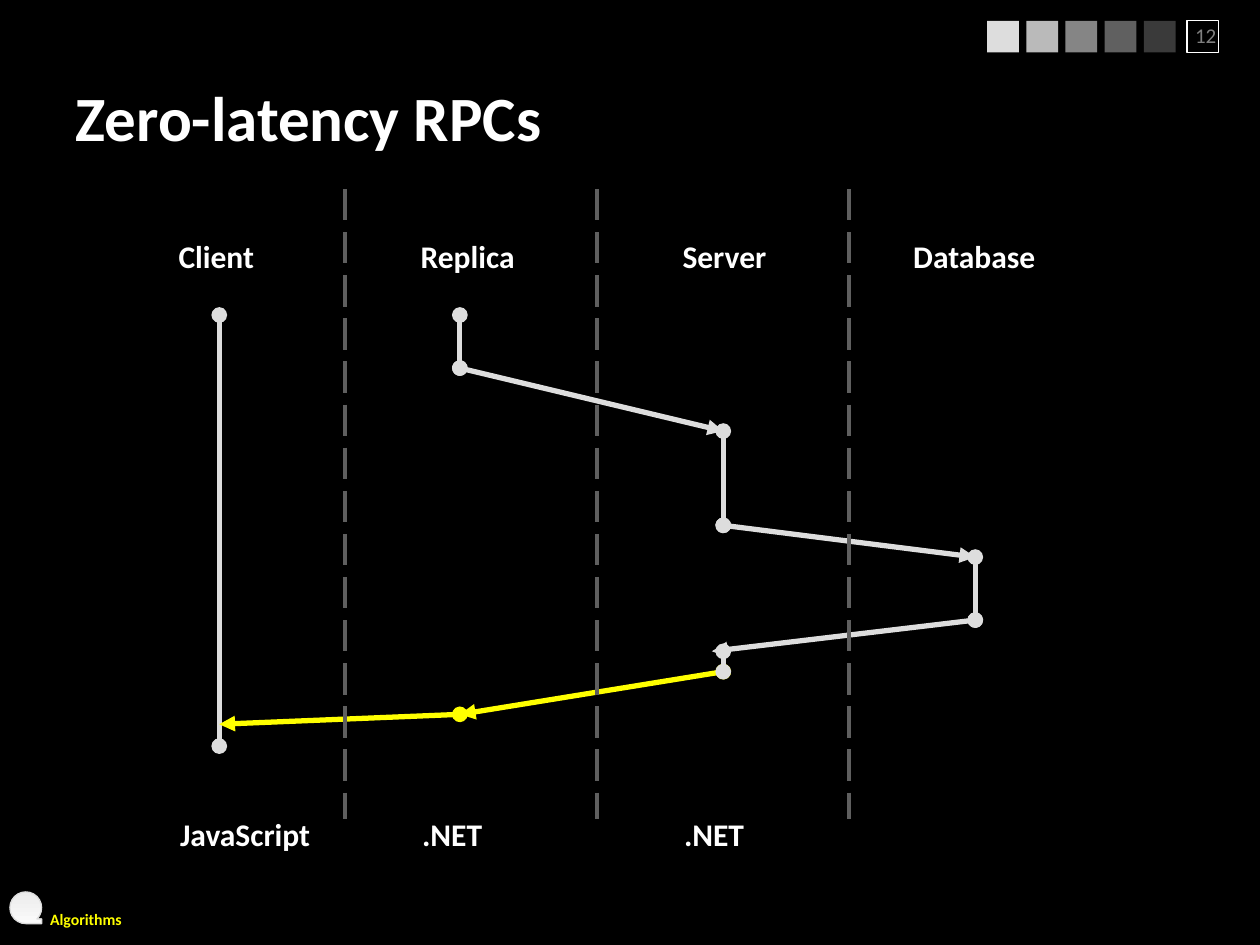
from lxml.etree import SubElement
from pptx import Presentation
from pptx.dml.color import RGBColor
from pptx.enum.dml import MSO_LINE_DASH_STYLE as Dash
from pptx.enum.shapes import MSO_CONNECTOR, MSO_SHAPE as Preset
from pptx.enum.text import MSO_ANCHOR as Anchor, MSO_AUTO_SIZE as AutoSize, PP_ALIGN as Align
from pptx.oxml.ns import qn
from pptx.util import Cm, Pt

# Content: lengths in cm, text sizes and line widths in points
FONT = "Calibri"
BLACK, WHITE, LIGHT, YELLOW = "000000", "FFFFFF", "DDDDDD", "FFFF00"
TITLE = "Zero-latency RPCs"
SWATCHES = [LIGHT, "BABABA", "858585", "606060", "3A3A3A"]
CLIENT, REPLICA, SERVER, DATABASE = 4.42, 9.27, 14.58, 19.66  # lane positions

# Text, left, width
ACTORS = [("Client", 3.35, 2.03), ("Replica", 8.23, 2.41),
          ("Server", 13.51, 2.21), ("Database", 18.16, 3.0)]
PLATFORMS = [("JavaScript", 3.38, 3.15), (".NET", 8.26, 1.73), (".NET", 13.54, 1.73)]

# Start x, start y, end x, end y, colour, end mark
STEPS = [
    (REPLICA, 6.35, REPLICA, 7.42, LIGHT, "oval"),
    (SERVER, 8.69, SERVER, 10.59, LIGHT, "oval"),
    (REPLICA, 7.42, SERVER, 8.69, LIGHT, "triangle"),
    (SERVER, 13.54, REPLICA, 14.4, YELLOW, "triangle"),
    (DATABASE, 11.23, DATABASE, 12.5, LIGHT, "oval"),
    (SERVER, 10.59, DATABASE, 11.23, LIGHT, "triangle"),
    (SERVER, 13.13, SERVER, 13.54, LIGHT, "oval"),
    (DATABASE, 12.5, 14.35, 13.13, LIGHT, "triangle"),
    (CLIENT, 6.35, CLIENT, 15.04, LIGHT, "oval"),
    (REPLICA, 14.4, CLIENT, 14.6, YELLOW, "triangle"),
]


def rgb(colour):
    return RGBColor.from_string(colour)


def write(shape, text, size, colour, bold=True, align=Align.LEFT):
    shape.text_frame.text = text
    paragraph = shape.text_frame.paragraphs[0]
    paragraph.alignment = align
    font = paragraph.runs[0].font
    font.name, font.size, font.bold = FONT, Pt(size), bold
    font.color.rgb = rgb(colour)


def add_label(text, left, top, width, height=1.02, size=18, colour=WHITE):
    box = slide.shapes.add_textbox(Cm(left), Cm(top), Cm(width), Cm(height))
    write(box, text, size, colour)
    box.text_frame.word_wrap = False
    box.text_frame.auto_size = AutoSize.SHAPE_TO_FIT_TEXT


def add_mark(preset, left, top, fill=None, line=None):
    shape = slide.shapes.add_shape(preset, Cm(left), Cm(top), Cm(0.64), Cm(0.64))
    shape.shadow.inherit = False
    if fill:
        shape.fill.solid()
        shape.fill.fore_color.rgb = rgb(fill)
    else:
        shape.fill.background()
    if line:
        shape.line.color.rgb = rgb(line)
        shape.line.width = Pt(0.75)
    else:
        shape.line.fill.background()
    return shape


def add_line(x1, y1, x2, y2, colour, width):
    connector = slide.shapes.add_connector(
        MSO_CONNECTOR.STRAIGHT, Cm(x1), Cm(y1), Cm(x2), Cm(y2))
    connector.line.color.rgb = rgb(colour)
    connector.line.width = Pt(width)
    SubElement(connector.element.spPr, qn("a:effectLst"))
    return connector


presentation = Presentation()
presentation.slide_width, presentation.slide_height = Cm(25.4), Cm(19.05)
slide = presentation.slides.add_slide(presentation.slide_layouts[5])
slide.background.fill.solid()
slide.background.fill.fore_color.rgb = rgb(BLACK)

# Footer topic with its round mark
add_label("Algorithms", 0.76, 18.21, 1.98, 0.64, 9, YELLOW)
mark = add_mark(Preset.FLOWCHART_SEQUENTIAL_ACCESS_STORAGE, 0.2, 17.98, line=LIGHT)
mark.fill.gradient()
mark.fill.gradient_angle = 270
for stop, colour in zip(mark.fill.gradient_stops, ("EBEBEB", "FBFBFB")):
    stop.color.rgb = rgb(colour)

# Grey scale and slide number
for index, colour in enumerate(SWATCHES):
    add_mark(Preset.RECTANGLE, 19.9 + 0.79 * index, 0.42, fill=colour)
add_mark(Preset.RECTANGLE, 23.93, 0.42, line=WHITE)
number = slide.shapes.add_textbox(Cm(23.7), Cm(0.2), Cm(1.07), Cm(1.02))
write(number, "12", 12, "808080", bold=False, align=Align.RIGHT)
number.text_frame.word_wrap = True
number.text_frame.vertical_anchor = Anchor.MIDDLE

# Title
title = slide.shapes.title
title.left, title.top, title.width, title.height = Cm(1.27), Cm(0.76), Cm(22.86), Cm(3.18)
write(title, TITLE, 36, WHITE)
title.text_frame.vertical_anchor = Anchor.MIDDLE

# Calls and processing times
for *ends, colour, end_mark in STEPS:
    outline = add_line(*ends, colour, 3).get_or_add_ln()
    SubElement(outline, qn("a:headEnd"), type="oval")
    SubElement(outline, qn("a:tailEnd"), type=end_mark)

# Lane dividers
for index in range(3):
    x = 6.96 + 5.08 * index
    add_line(x, 3.81, x, 16.51, "5F5F5F", 2.25).line.dash_style = Dash.LONG_DASH

# Lane names above and below
for labels, top in ((ACTORS, 4.65), (PLATFORMS, 16.31)):
    for text, left, width in labels:
        add_label(text, left, top, width)

presentation.save("out.pptx")
